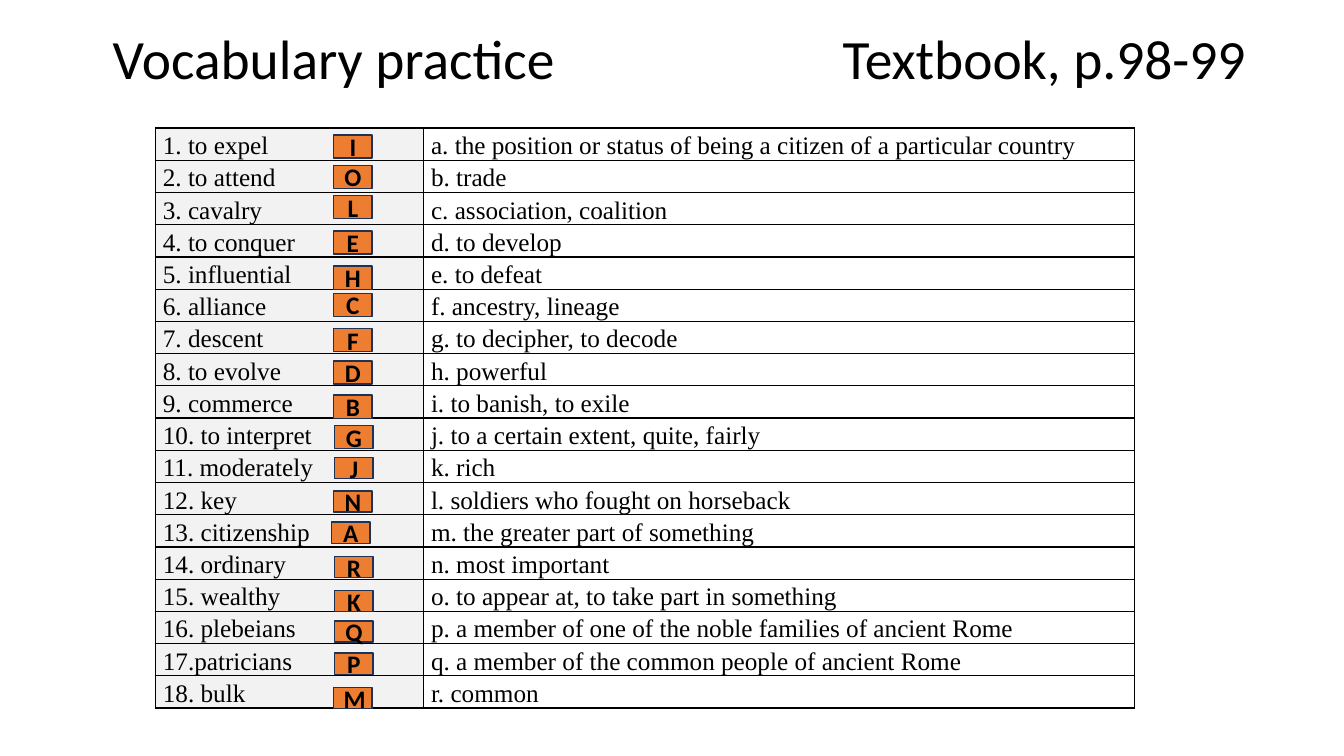
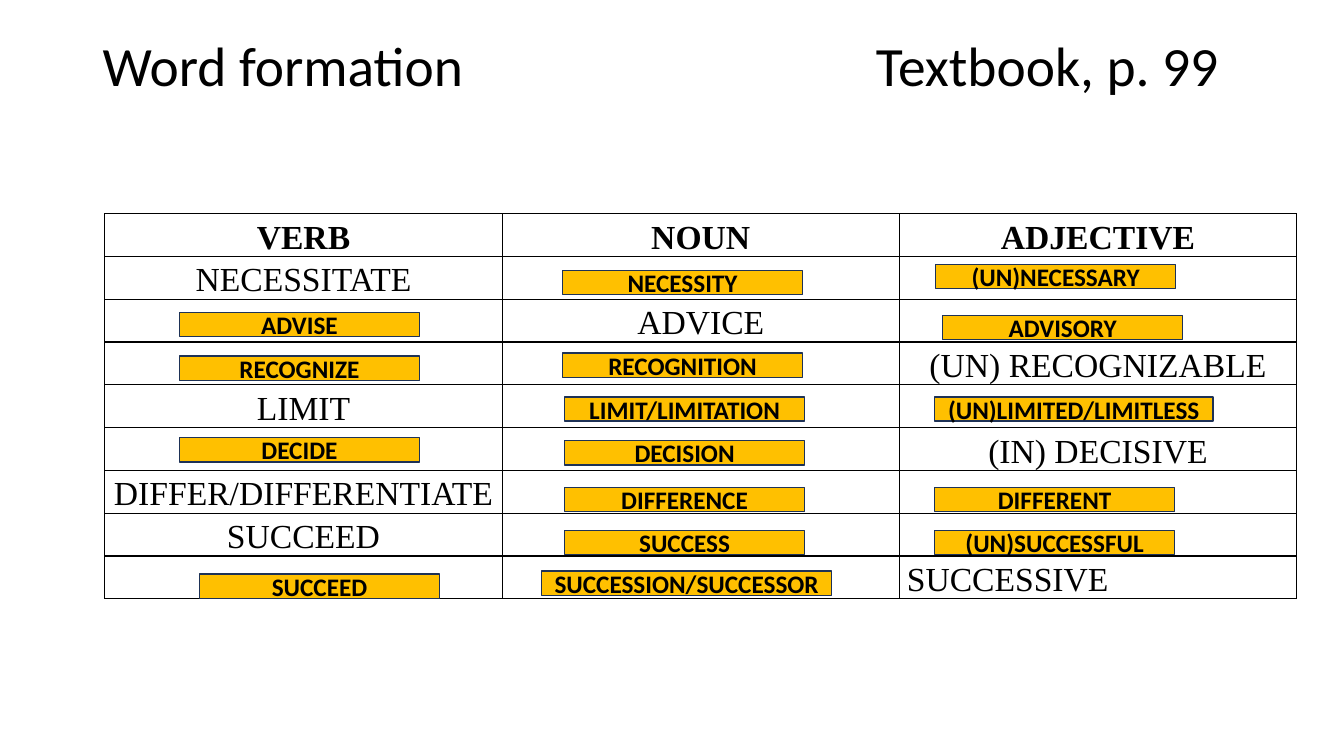
from dataclasses import dataclass

from lxml.etree import SubElement
from pptx import Presentation
from pptx.dml.color import RGBColor
from pptx.enum.shapes import MSO_SHAPE
from pptx.enum.text import MSO_ANCHOR, PP_ALIGN
from pptx.oxml.ns import qn
from pptx.util import Inches, Pt

BLACK = RGBColor(0x00, 0x00, 0x00)
PALE_GREY = RGBColor(0xF2, 0xF2, 0xF2)
ORANGE = RGBColor(0xED, 0x7D, 0x31)
GOLD = RGBColor(0xFF, 0xC0, 0x00)
NAVY = RGBColor(0x1E, 0x32, 0x56)
SANS, SERIF = "Calibri", "Times New Roman"
LINE_PITCH = 1.27  # table line height as a share of the text size

VOCABULARY = [
    ("1. to expel", "a. the position or status of being a citizen of a particular country"),
    ("2. to attend", "b. trade"),
    ("3. cavalry", "c. association, coalition"),
    ("4. to conquer", "d. to develop"),
    ("5. influential", "e. to defeat"),
    ("6. alliance", "f. ancestry, lineage"),
    ("7. descent", "g. to decipher, to decode"),
    ("8. to evolve", "h. powerful"),
    ("9. commerce", "i. to banish, to exile"),
    ("10. to interpret", "j. to a certain extent, quite, fairly"),
    ("11. moderately", "k. rich"),
    ("12. key", "l. soldiers who fought on horseback"),
    ("13. citizenship", "m. the greater part of something"),
    ("14. ordinary", "n. most important"),
    ("15. wealthy", "o. to appear at, to take part in something"),
    ("16. plebeians", "p. a member of one of the noble families of ancient Rome"),
    ("17.patricians", "q. a member of the common people of ancient Rome"),
    ("18. bulk", "r. common"),
]

# One per vocabulary row: letter, then its offset from the row's top left corner
MATCHES = [
    ("I", 1.77, 0.07), ("O", 1.77, 0.05), ("L", 1.77, 0.03),
    ("E", 1.77, 0.06), ("H", 1.77, 0.09), ("C", 1.77, 0.04),
    ("F", 1.77, 0.07), ("D", 1.77, 0.07), ("B", 1.77, 0.09),
    ("G", 1.78, 0.07), ("J", 1.78, 0.07), ("N", 1.77, 0.08),
    ("A", 1.75, 0.07), ("R", 1.78, 0.09), ("K", 1.78, 0.11),
    ("Q", 1.78, 0.09), ("P", 1.78, 0.09), ("M", 1.77, 0.11),
]

WORD_FAMILIES = [
    ("VERB", "NOUN", "ADJECTIVE"),
    ("NECESSITATE", "", ""),
    ("", "ADVICE", ""),
    ("", "", "(UN) RECOGNIZABLE"),
    ("LIMIT", "", ""),
    ("", "", "(IN) DECISIVE"),
    ("DIFFER/DIFFERENTIATE", "", ""),
    ("SUCCEED", "", ""),
    ("", "", "SUCCESSIVE"),
]

# Row, column, offset from that cell's corner, width, word
FORMED_WORDS = [
    (1, 1, 0.60, 0.14, 2.38, "NECESSITY"),
    (1, 2, 0.36, 0.08, 2.38, "(UN)NECESSARY"),
    (2, 0, 0.74, 0.13, 2.38, "ADVISE"),
    (2, 2, 0.43, 0.16, 2.38, "ADVISORY"),
    (3, 0, 0.74, 0.14, 2.38, "RECOGNIZE"),
    (3, 1, 0.60, 0.11, 2.38, "RECOGNITION"),
    (4, 1, 0.62, 0.12, 2.38, "LIMIT/LIMITATION"),
    (4, 2, 0.35, 0.12, 2.76, "(UN)LIMITED/LIMITLESS"),
    (5, 0, 0.74, 0.10, 2.38, "DECIDE"),
    (5, 1, 0.62, 0.13, 2.38, "DECISION"),
    (6, 1, 0.62, 0.17, 2.38, "DIFFERENCE"),
    (6, 2, 0.35, 0.17, 2.38, "DIFFERENT"),
    (7, 1, 0.62, 0.17, 2.38, "SUCCESS"),
    (7, 2, 0.35, 0.17, 2.38, "(UN)SUCCESSFUL"),
    (8, 0, 0.94, 0.18, 2.38, "SUCCEED"),
    (8, 1, 0.39, 0.15, 2.88, "SUCCESSION/SUCCESSOR"),
]


@dataclass
class Grid:
    left: float
    top: float
    columns: tuple
    rows: int
    height: float

    def corner(self, row, column):
        return (self.left + sum(self.columns[:column]),
                self.top + row * self.height / self.rows)


def style_font(font, face, size, bold=False):
    font.name, font.size, font.bold = face, Pt(size), bold
    font.color.rgb = BLACK


def add_title(slide, left, top, height, topic, reference, tab):
    """Topic at the left, textbook reference at a tab stop."""
    box = slide.shapes.add_textbox(*map(Inches, (left, top, 11.5, height)))
    frame = box.text_frame
    frame.word_wrap = True
    frame.vertical_anchor = MSO_ANCHOR.MIDDLE
    heading = frame.paragraphs[0]
    heading.text = f"{topic}\t{reference}"
    heading.line_spacing = 0.9
    stops = SubElement(heading._p.get_or_add_pPr(), qn("a:tabLst"))
    SubElement(stops, qn("a:tab"), pos=str(Inches(tab)), algn="l")
    style_font(heading.runs[0].font, SANS, 39.6)


def add_borders(cell):
    properties = cell._tc.get_or_add_tcPr()
    for side in ("lnL", "lnR", "lnT", "lnB"):
        border = SubElement(properties, qn(f"a:{side}"), w=str(Pt(1)))
        fill = SubElement(border, qn("a:solidFill"))
        SubElement(fill, qn("a:srgbClr"), val=str(BLACK))


def fill_cell(cell, text, size, bold, align, shade):
    cell.margin_left = cell.margin_right = Pt(5.4)
    cell.margin_top = cell.margin_bottom = 0
    add_borders(cell)
    if shade is None:
        cell.fill.background()
    else:
        cell.fill.solid()
        cell.fill.fore_color.rgb = shade
    entry = cell.text_frame.paragraphs[0]
    entry.text = text
    entry.alignment = align
    entry.line_spacing = Pt(size * LINE_PITCH)
    entry.space_before = entry.space_after = Pt(0)
    for run in entry.runs:
        style_font(run.font, SERIF, size, bold)


def add_word_table(slide, grid, content, size, style_of):
    """style_of(row, column) gives bold, alignment and shade of a cell."""
    frame = slide.shapes.add_table(
        grid.rows, len(grid.columns),
        *map(Inches, (grid.left, grid.top, sum(grid.columns), grid.height)))
    table = frame.table
    table.first_row = table.horz_banding = False
    for column, width in zip(table.columns, grid.columns):
        column.width = Inches(width)
    for r, entries in enumerate(content):
        for c, text in enumerate(entries):
            fill_cell(table.cell(r, c), text, size, *style_of(r, c))


def add_answer(slide, corner, offset, width, height, text, colour):
    left, top = (start + shift for start, shift in zip(corner, offset))
    label = slide.shapes.add_shape(
        MSO_SHAPE.RECTANGLE, *map(Inches, (left, top, width, height)))
    label.shadow.inherit = False
    label.fill.solid()
    label.fill.fore_color.rgb = colour
    label.line.color.rgb = NAVY
    label.line.width = Pt(1)
    frame = label.text_frame
    frame.vertical_anchor = MSO_ANCHOR.MIDDLE
    answer = frame.paragraphs[0]
    answer.text = text
    answer.alignment = PP_ALIGN.CENTER
    style_font(answer.runs[0].font, SANS, 18, bold=True)


def vocabulary_style(row, column):
    return False, PP_ALIGN.LEFT, PALE_GREY if column == 0 else None


def family_style(row, column):
    last_cell = (row, column) == (len(WORD_FAMILIES) - 1, 2)
    return row == 0, PP_ALIGN.LEFT if last_cell else PP_ALIGN.CENTER, None


def build_vocabulary(slide):
    add_title(slide, 1.02, 0.3, 0.62, "Vocabulary practice", "Textbook, p.98-99", 7.24)
    grid = Grid(1.54, 1.27, (2.66, 7.05), len(VOCABULARY), 5.76)
    add_word_table(slide, grid, VOCABULARY, 18, vocabulary_style)
    for row, (letter, *offset) in enumerate(MATCHES):
        height = 0.23 if row < 10 else 0.21
        add_answer(slide, grid.corner(row, 0), offset, 0.38, height, letter, ORANGE)


def build_word_formation(slide):
    add_title(slide, 0.92, 0.4, 0.57, "Word formation", "Textbook, p. 99", 7.67)
    grid = Grid(1.04, 2.12, (3.94,) * 3, len(WORD_FAMILIES), 3.82)
    add_word_table(slide, grid, WORD_FAMILIES, 24, family_style)
    for row, column, dx, dy, width, word in FORMED_WORDS:
        add_answer(slide, grid.corner(row, column), (dx, dy), width, 0.24, word, GOLD)


def main():
    deck = Presentation()
    deck.slide_width, deck.slide_height = Inches(13.33), Inches(7.5)
    blank = deck.slide_layouts[6]
    for build in (build_vocabulary, build_word_formation):
        build(deck.slides.add_slide(blank))
    deck.save("out.pptx")


if __name__ == "__main__":
    main()
